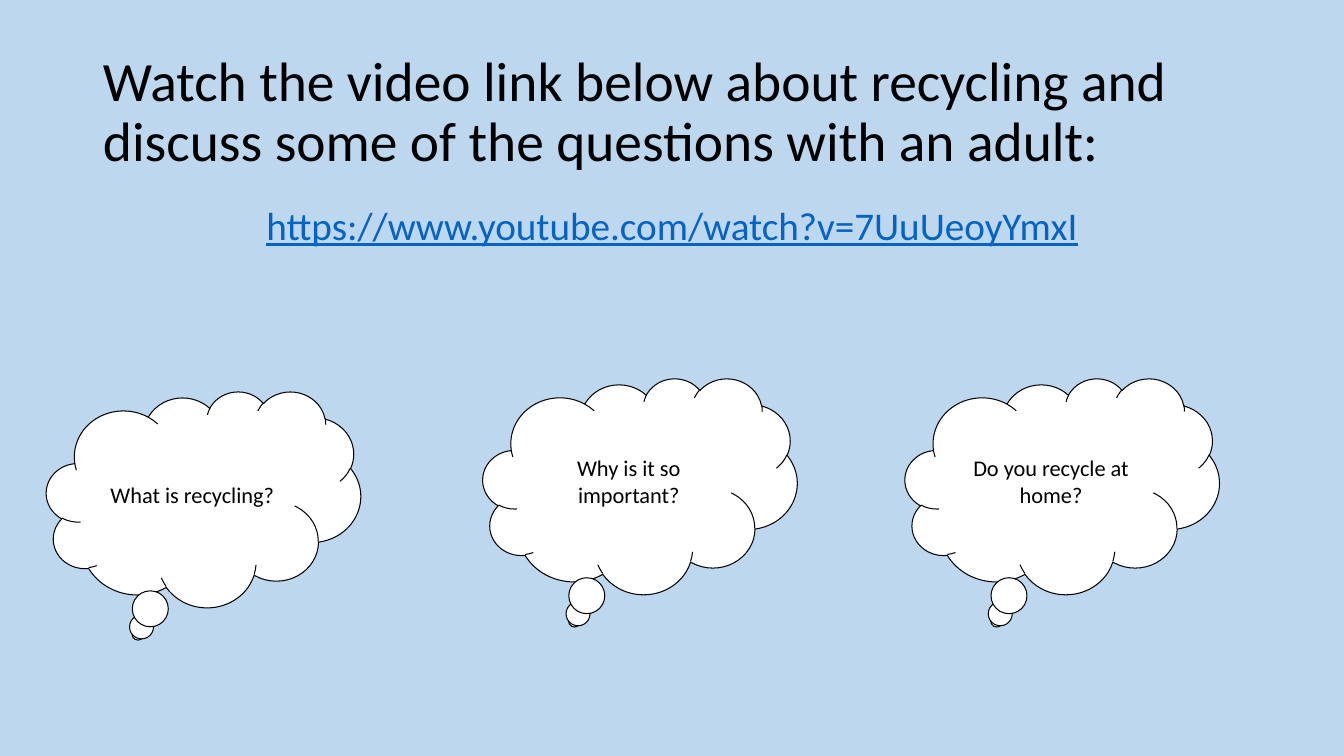
import pptx
import pptx.dml.color
import pptx.enum.shapes
import pptx.enum.text
import pptx.util
from dataclasses import dataclass

Cm = pptx.util.Cm
Align = pptx.enum.text.PP_ALIGN
Anchor = pptx.enum.text.MSO_ANCHOR

# Content; places are in centimetres
HEADING = ("Watch the video link below about recycling and "
           "discuss some of the questions with an adult:")
VIDEO_ADDRESS = "https://www.youtube.com/watch?v=7UuUeoyYmxI"
QUESTIONS = [
    ("What is recycling?", (1.17, 9.86)),
    ("Why is it so important?", (12.17, 9.53)),
    ("Do you recycle at home?", (22.81, 9.53)),
]
SLIDE_SIZE = (33.87, 19.05)
MARGIN = 2.34
CLOUD_SIZE = (7.92, 5.44)


@dataclass(frozen=True)
class Theme:
    font: str = "Calibri"
    sky: str = "BDD7EE"
    cloud: str = "FFFFFF"
    ink: str = "000000"
    address: str = "0563C1"
    heading_size: float = 39.6
    address_size: float = 28
    question_size: float = 16
    outline: float = 0.75


THEME = Theme()


def rgb(value):
    return pptx.dml.color.RGBColor.from_string(value)


def write(shape, text, size, color=THEME.ink, align=Align.CENTER,
          anchor=Anchor.MIDDLE, spacing=1.0, underline=False):
    frame = shape.text_frame
    frame.word_wrap = True
    frame.auto_size = pptx.enum.text.MSO_AUTO_SIZE.NONE
    frame.vertical_anchor = anchor
    paragraph = frame.paragraphs[0]
    paragraph.alignment = align
    paragraph.line_spacing = spacing
    paragraph.space_before = pptx.util.Pt(0)
    run = paragraph.add_run()
    run.text = text
    run.font.name = THEME.font
    run.font.size = pptx.util.Pt(size)
    run.font.color.rgb = rgb(color)
    run.font.underline = underline
    return paragraph


def place(shape, left, top, width, height):
    shape.left, shape.top = Cm(left), Cm(top)
    shape.width, shape.height = Cm(width), Cm(height)


def remove_bullet(paragraph):
    properties = paragraph._p.get_or_add_pPr()
    properties.set("marL", "0")
    properties.set("indent", "0")
    properties.append(pptx.oxml.parse_xml(
        '<a:buNone xmlns:a="http://schemas.openxmlformats.org/drawingml/2006/main"/>'))


def add_thought(slide, question, position):
    cloud = slide.shapes.add_shape(
        pptx.enum.shapes.MSO_SHAPE.CLOUD_CALLOUT,
        *(Cm(length) for length in position + CLOUD_SIZE))
    cloud.shadow.inherit = False
    cloud.fill.solid()
    cloud.fill.fore_color.rgb = rgb(THEME.cloud)
    cloud.line.color.rgb = rgb(THEME.ink)
    cloud.line.width = pptx.util.Pt(THEME.outline)
    write(cloud, question, THEME.question_size)


def main():
    deck = pptx.Presentation()
    deck.slide_width, deck.slide_height = map(Cm, SLIDE_SIZE)
    slide = deck.slides.add_slide(deck.slide_layouts[1])
    slide.background.fill.solid()
    slide.background.fill.fore_color.rgb = rgb(THEME.sky)

    text_width = SLIDE_SIZE[0] - 2 * MARGIN
    heading, video = slide.placeholders
    place(heading, MARGIN, 1.02, text_width, 3.68)
    write(heading, HEADING, THEME.heading_size, align=Align.LEFT, spacing=0.9)
    place(video, MARGIN, 5.08, text_width, 1.73)
    remove_bullet(write(video, VIDEO_ADDRESS, THEME.address_size,
                        color=THEME.address, anchor=Anchor.TOP,
                        spacing=0.9, underline=True))

    for question, position in QUESTIONS:
        add_thought(slide, question, position)
    deck.save("out.pptx")


if __name__ == "__main__":
    main()
